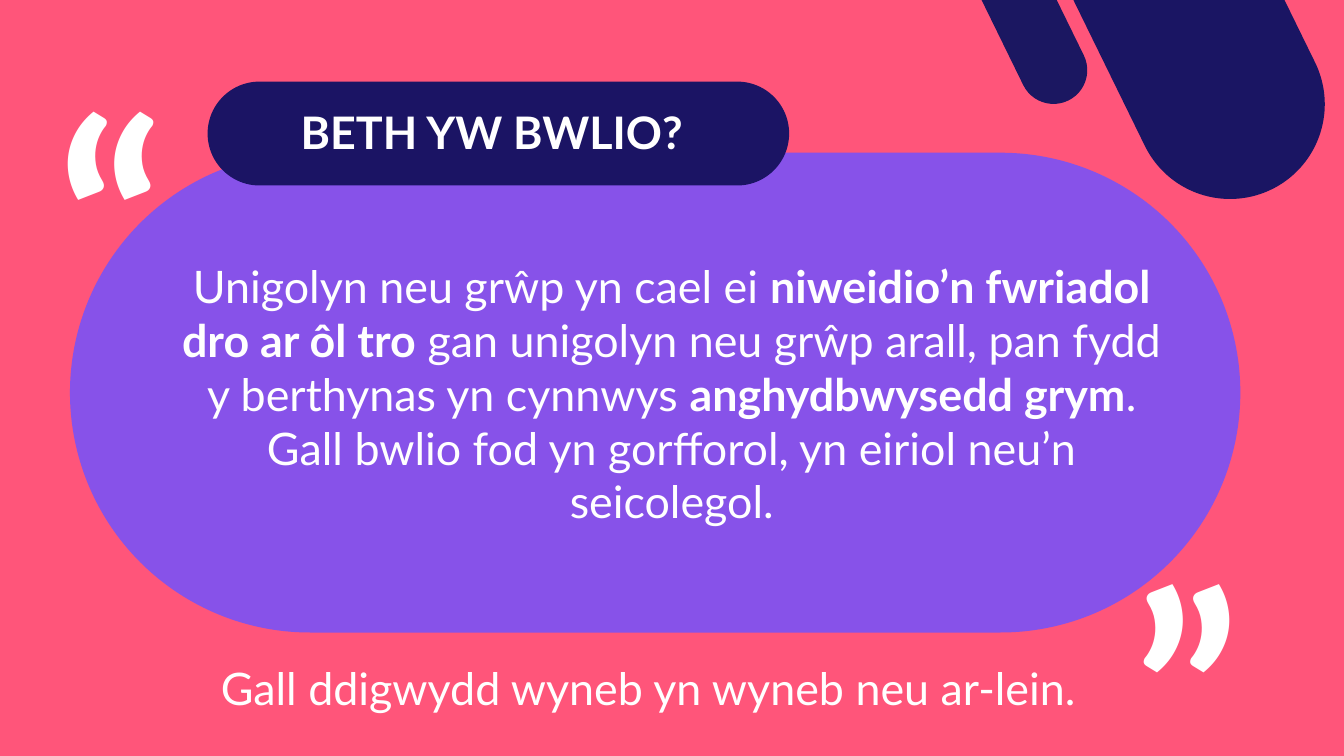
from dataclasses import dataclass

from lxml.etree import SubElement
from pptx import Presentation
from pptx.dml.color import RGBColor
from pptx.enum.shapes import MSO_SHAPE
from pptx.enum.text import MSO_ANCHOR, MSO_AUTO_SIZE, PP_ALIGN
from pptx.oxml.ns import qn
from pptx.shapes.base import BaseShape
from pptx.slide import Slide
from pptx.util import Pt

COLOURS = {
    "background": "FF557A",
    "panel": "8752E9",
    "large_bar": "1A1563",
    "small_bar": "1B1761",
    "heading": "1B1464",
    "text": "FFFFFF",
}


@dataclass(frozen=True)
class Box:
    left: float
    top: float
    width: float
    height: float
    rotation: float = 0


@dataclass(frozen=True)
class Pill:
    box: Box
    colour: str


@dataclass(frozen=True)
class Phrase:
    text: str
    bold: bool = False


PILLS = [
    Pill(Box(50, 109.1, 836, 342.7), "panel"),
    Pill(Box(759.6, -214.6, 135.4, 368.6, 153.9), "large_bar"),
    Pill(Box(679, -187.2, 48.2, 272.9, 153.9), "small_bar"),
    Pill(Box(148.3, 58.3, 415.4, 74.2), "heading"),
]

QUOTE_MARKS = [
    Box(33.1, 32.4, 135.4, 249.8),
    Box(758.2, 278.6, 135.4, 249.8, 180),
]

DEFINITION = [
    Phrase("Unigolyn neu grŵp yn cael ei "),
    Phrase("niweidio’n fwriadol dro ar ôl tro", True),
    Phrase(" gan unigolyn neu grŵp arall, pan fydd y berthynas yn cynnwys "),
    Phrase("anghydbwysedd grym", True),
    Phrase(". Gall bwlio fod yn gorfforol, yn eiriol neu’n seicolegol."),
]


def rgb(name: str) -> RGBColor:
    return RGBColor.from_string(COLOURS[name])


def place(shape: BaseShape, box: Box) -> None:
    shape.left, shape.top = Pt(box.left), Pt(box.top)
    shape.width, shape.height = Pt(box.width), Pt(box.height)
    shape.rotation = box.rotation


def draw_pill(slide: Slide, pill: Pill) -> None:
    shape = slide.shapes.add_shape(MSO_SHAPE.ROUNDED_RECTANGLE, 0, 0, 0, 0)
    place(shape, pill.box)
    shape.adjustments[0] = 0.5
    shape.fill.solid()
    shape.fill.fore_color.rgb = rgb(pill.colour)
    shape.line.fill.background()
    shape.shadow.inherit = False


def write(shape: BaseShape, box: Box, phrases: list[Phrase],
          size: float = 32, align: PP_ALIGN = PP_ALIGN.CENTER) -> None:
    place(shape, box)
    frame = shape.text_frame
    frame.word_wrap = True
    frame.auto_size = MSO_AUTO_SIZE.NONE
    frame.vertical_anchor = MSO_ANCHOR.TOP
    paragraph = frame.paragraphs[0]
    paragraph.alignment = align
    paragraph.space_before = Pt(0)
    paragraph.font.name = "Lato"
    paragraph.font.size = Pt(size)
    paragraph.font.color.rgb = rgb("text")
    for phrase in phrases:
        run = paragraph.add_run()
        run.text = phrase.text
        run.font.bold = phrase.bold


def add_text(slide: Slide, box: Box, phrase: Phrase,
             size: float = 32, align: PP_ALIGN = PP_ALIGN.CENTER) -> None:
    write(slide.shapes.add_textbox(0, 0, 0, 0), box, [phrase], size, align)


def remove_bullet(shape: BaseShape) -> None:
    properties = shape.text_frame.paragraphs[0]._p.get_or_add_pPr()
    properties.set("marL", "0")
    properties.set("indent", "0")
    bullet = SubElement(properties, qn("a:buNone"))
    # The bullet setting must precede the default run properties
    defaults = properties.find(qn("a:defRPr"))
    if defaults is not None:
        defaults.addprevious(bullet)


def main() -> None:
    deck = Presentation()
    deck.slide_width, deck.slide_height = Pt(960), Pt(540)
    slide = deck.slides.add_slide(deck.slide_layouts[1])
    slide.background.fill.solid()
    slide.background.fill.fore_color.rgb = rgb("background")

    # Panel, corner bars and heading pill
    for pill in PILLS:
        draw_pill(slide, pill)

    # Heading and definition, brought in front of the pills
    heading, definition = slide.shapes.title, slide.placeholders[1]
    for placeholder in (heading, definition):
        slide.shapes._spTree.append(placeholder._element)
    write(heading, Box(25.9, 71.3, 650.9, 46.1), [Phrase("BETH YW BWLIO?", True)])
    write(definition, Box(111.6, 181.4, 736.6, 278.6), DEFINITION)
    remove_bullet(definition)

    # Quotation marks around the panel
    for box in QUOTE_MARKS:
        add_text(slide, box, Phrase("“", True), 200, PP_ALIGN.LEFT)

    # Closing line
    add_text(slide, Box(95, 468.7, 736.6, 46.1),
             Phrase("Gall ddigwydd wyneb yn wyneb neu ar-lein."))

    deck.save("out.pptx")


if __name__ == "__main__":
    main()
